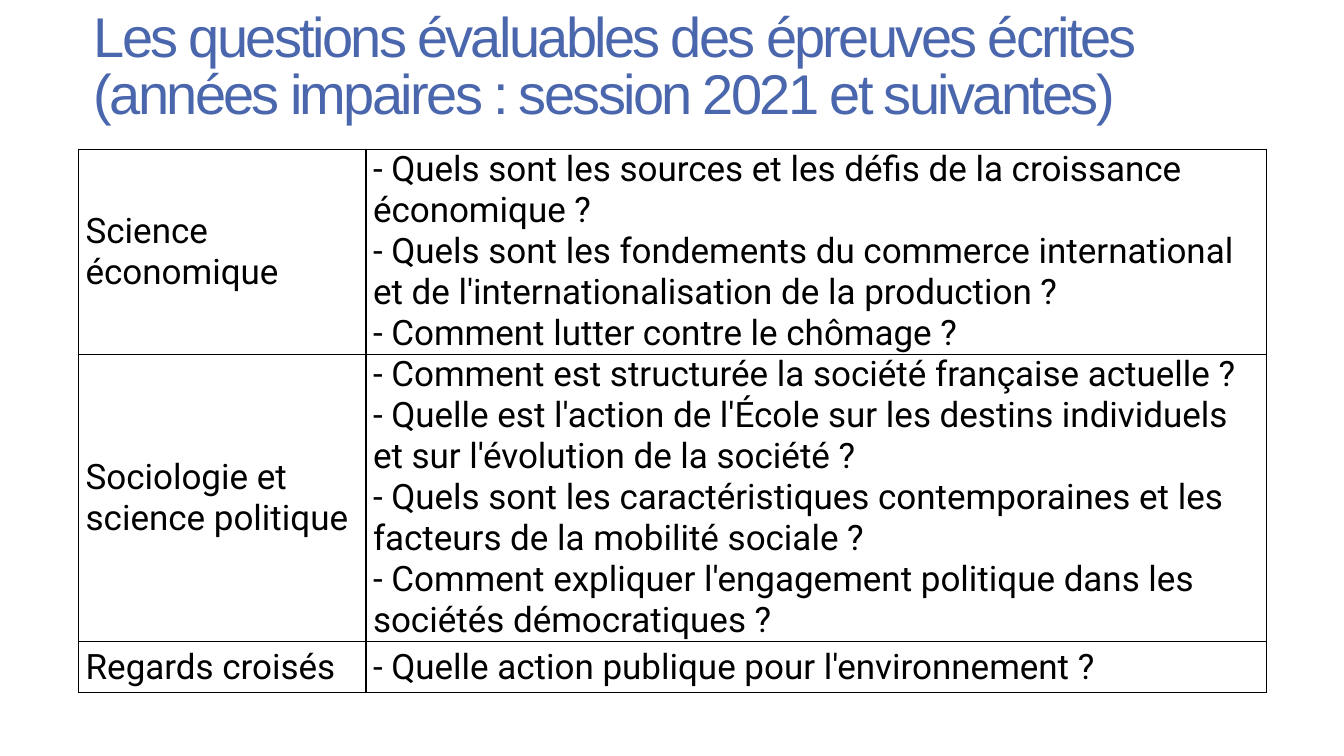
from pptx import Presentation
from pptx import util as u
from pptx.dml.color import RGBColor
from pptx.enum import text
from pptx.oxml import parse_xml
from pptx.oxml.ns import nsdecls

TITLE_LINES = [
    "Les questions évaluables des épreuves écrites",
    "(années impaires : session 2021 et suivantes)",
]
COLUMN_WIDTHS = [2.85, 8.93]
# Row height, subject, questions
SUBJECTS = [
    (2.03, "Science économique", [
        "- Quels sont les sources et les défis de la croissance économique ?",
        "- Quels sont les fondements du commerce international "
        "et de l'internationalisation de la production ?",
        "- Comment lutter contre le chômage ?",
    ]),
    (2.85, "Sociologie et science politique", [
        "- Comment est structurée la société française actuelle ?",
        "- Quelle est l'action de l'École sur les destins individuels "
        "et sur l'évolution de la société ?",
        "- Quels sont les caractéristiques contemporaines et les "
        "facteurs de la mobilité sociale ?",
        "- Comment expliquer l'engagement politique dans les "
        "sociétés démocratiques ?",
    ]),
    (0.51, "Regards croisés", [
        "- Quelle action publique pour l'environnement ?",
    ]),
]


def color(value):
    return RGBColor.from_string(value)


def add_span(para, words, font, size, tint):
    span = para.add_run()
    span.text = words
    span.font.name = font
    span.font.size = u.Pt(size)
    span.font.color.rgb = color(tint)
    return span


def set_margins(box, side, end):
    box.margin_left = box.margin_right = u.Inches(side)
    box.margin_top = box.margin_bottom = u.Inches(end)


def fill_title(title):
    title.left, title.top = u.Inches(0.88), u.Inches(-0.22)
    title.width, title.height = u.Inches(13.15), u.Inches(1.81)
    frame = title.text_frame
    frame.word_wrap = True
    frame.auto_size = text.MSO_AUTO_SIZE.NONE
    frame.vertical_anchor = text.MSO_ANCHOR.MIDDLE
    set_margins(frame, 0.05, 0.05)
    for index, line in enumerate(TITLE_LINES):
        para = frame.add_paragraph() if index else frame.paragraphs[0]
        para.alignment = text.PP_ALIGN.LEFT
        para.line_spacing = 0.85
        para.space_before = u.Pt(0)
        span = add_span(para, line, "Arial", 40, "4A66AC")
        span.font._element.set("spc", "-190")


def add_borders(cell, tint, width):
    properties = cell._tc.get_or_add_tcPr()
    for side in "LRTB":
        properties.append(parse_xml(
            f'<a:ln{side} {nsdecls("a")} w="{u.Pt(width)}"><a:solidFill>'
            f'<a:srgbClr val="{tint}"/></a:solidFill></a:ln{side}>'))


def fill_cell(cell, lines):
    add_borders(cell, "000000", 1)
    cell.fill.background()
    cell.vertical_anchor = text.MSO_ANCHOR.MIDDLE
    set_margins(cell, 0.07, 0)
    para = cell.text_frame.paragraphs[0]
    for index, line in enumerate(lines):
        if index:
            para.add_line_break()
        add_span(para, line, "Roboto", 25, "000000")


def add_question_table(page):
    height = sum(subject[0] for subject in SUBJECTS)
    table = page.shapes.add_table(
        len(SUBJECTS), len(COLUMN_WIDTHS), u.Inches(0.78), u.Inches(1.48),
        u.Inches(sum(COLUMN_WIDTHS)), u.Inches(height)).table
    table.first_row = table.horz_banding = False
    for column, width in zip(table.columns, COLUMN_WIDTHS):
        column.width = u.Inches(width)
    for row, (row_height, subject, questions) in zip(table.rows, SUBJECTS):
        row.height = u.Inches(row_height)
        fill_cell(row.cells[0], [subject])
        fill_cell(row.cells[1], questions)


def main():
    deck = Presentation()
    deck.slide_width, deck.slide_height = u.Inches(13.33), u.Inches(7.5)
    page = deck.slides.add_slide(deck.slide_layouts.get_by_name("Title Only"))
    page.background.fill.solid()
    page.background.fill.fore_color.rgb = color("FFFFFF")
    fill_title(page.shapes.title)
    add_question_table(page)
    deck.save("out.pptx")


if __name__ == "__main__":
    main()
